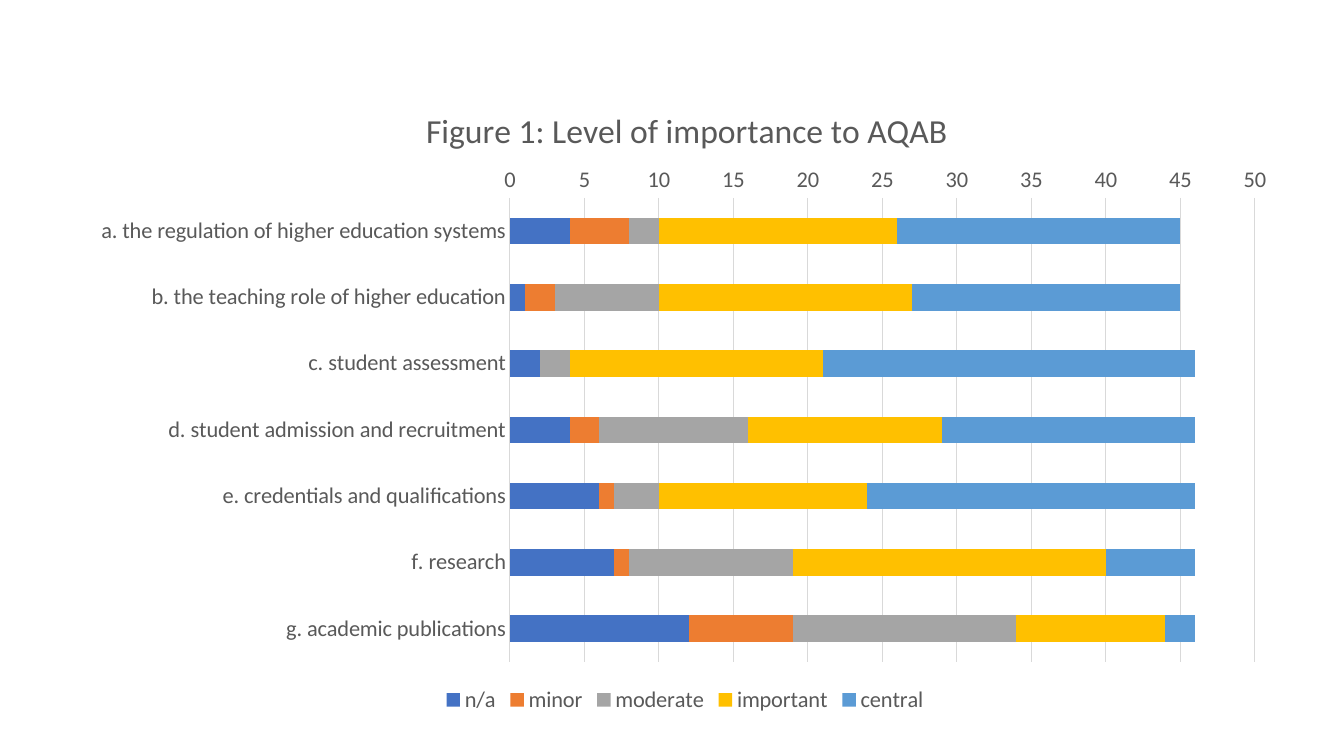
from lxml import etree
from pptx import Presentation, util as u
from pptx.chart.data import CategoryChartData
from pptx.dml.color import RGBColor
from pptx.enum import chart as kinds
from pptx.oxml.ns import qn

# Content
TITLE = "Figure 1: Level of importance to AQAB"
TOPICS = [
    "a. the regulation of higher education systems",
    "b. the teaching role of higher education",
    "c. student assessment",
    "d. student admission and recruitment",
    "e. credentials and qualifications",
    "f. research",
    "g. academic publications",
]
LEVELS = {
    "n/a": [4, 1, 2, 4, 6, 7, 12],
    "minor": [4, 2, 0, 2, 1, 1, 7],
    "moderate": [2, 7, 2, 10, 3, 11, 15],
    "important": [16, 17, 17, 13, 14, 21, 10],
    "central": [19, 18, 25, 17, 22, 6, 2],
}
COLOURS = {
    "n/a": "4472C4", "minor": "ED7D31", "moderate": "A5A5A5",
    "important": "FFC000", "central": "5B9BD5",
    "text": "595959", "grid": "D9D9D9",
}
FONT = "Calibri"

# Places in px: left, top, width, height
SLIDE = (1344, 756)
CHART = (78, 75, 1214, 643)
PLOT = (510, 198, 745, 464)
HEADING = (420, 102)


def emu(px):
    return round(px * 914400 / 100.8)


def colour(name):
    return RGBColor.from_string(COLOURS[name])


def style_font(font, size):
    font.size = u.Pt(size)
    font.name = FONT
    font.bold = False
    font.color.rgb = colour("text")


def style_line(line):
    line.color.rgb = colour("grid")
    line.width = u.Pt(0.75)


def place(parent, index, left, top, size=()):
    """Fix a chart part at a place given in slide px."""
    for old in parent.findall(qn("c:layout")):
        parent.remove(old)
    layout = etree.Element(qn("c:layout"))
    parent.insert(index, layout)
    manual = etree.SubElement(layout, qn("c:manualLayout"))
    settings = [("xMode", "edge"), ("yMode", "edge"),
                ("x", (left - CHART[0]) / CHART[2]),
                ("y", (top - CHART[1]) / CHART[3])]
    if size:
        settings.insert(0, ("layoutTarget", "inner"))
        settings += [("w", size[0] / CHART[2]), ("h", size[1] / CHART[3])]
    for tag, value in settings:
        etree.SubElement(manual, qn("c:" + tag)).set("val", str(value))


# Slide
deck = Presentation()
deck.slide_width, deck.slide_height = map(emu, SLIDE)
page = deck.slides.add_slide(deck.slide_layouts[6])

# Stacked bars
data = CategoryChartData()
data.categories = TOPICS
for level, counts in LEVELS.items():
    data.add_series(level, counts)
chart = page.shapes.add_chart(
    kinds.XL_CHART_TYPE.BAR_STACKED, *map(emu, CHART), data).chart
style_font(chart.font, 16)
bars = chart.plots[0]
bars.gap_width = 150
bars.overlap = 100
bars.vary_by_categories = False
for series in bars.series:
    series.format.fill.solid()
    series.format.fill.fore_color.rgb = colour(series.name)
    series.invert_if_negative = False
place(chart.plots[0]._element.getparent(), 0, *PLOT[:2], PLOT[2:])

# Axes
topics, counts = chart.category_axis, chart.value_axis
for axis in (topics, counts):
    axis.major_tick_mark = axis.minor_tick_mark = kinds.XL_TICK_MARK.NONE
    style_font(axis.tick_labels.font, 16)
topics.reverse_order = True
style_line(topics.format.line)
counts.minimum_scale, counts.maximum_scale, counts.major_unit = 0, 50, 5
counts.has_major_gridlines = True
style_line(counts.major_gridlines.format.line)
counts.format.line.fill.background()

# Heading
chart.has_title = True
heading = chart.chart_title
span = heading.text_frame.paragraphs[0].add_run()
span.text = TITLE
style_font(span.font, 24)
heading.include_in_layout = False
place(heading._element, 1, *HEADING)

# Legend
chart.has_legend = True
chart.legend.position = kinds.XL_LEGEND_POSITION.BOTTOM
chart.legend.include_in_layout = False
style_font(chart.legend.font, 16)

deck.save("out.pptx")
